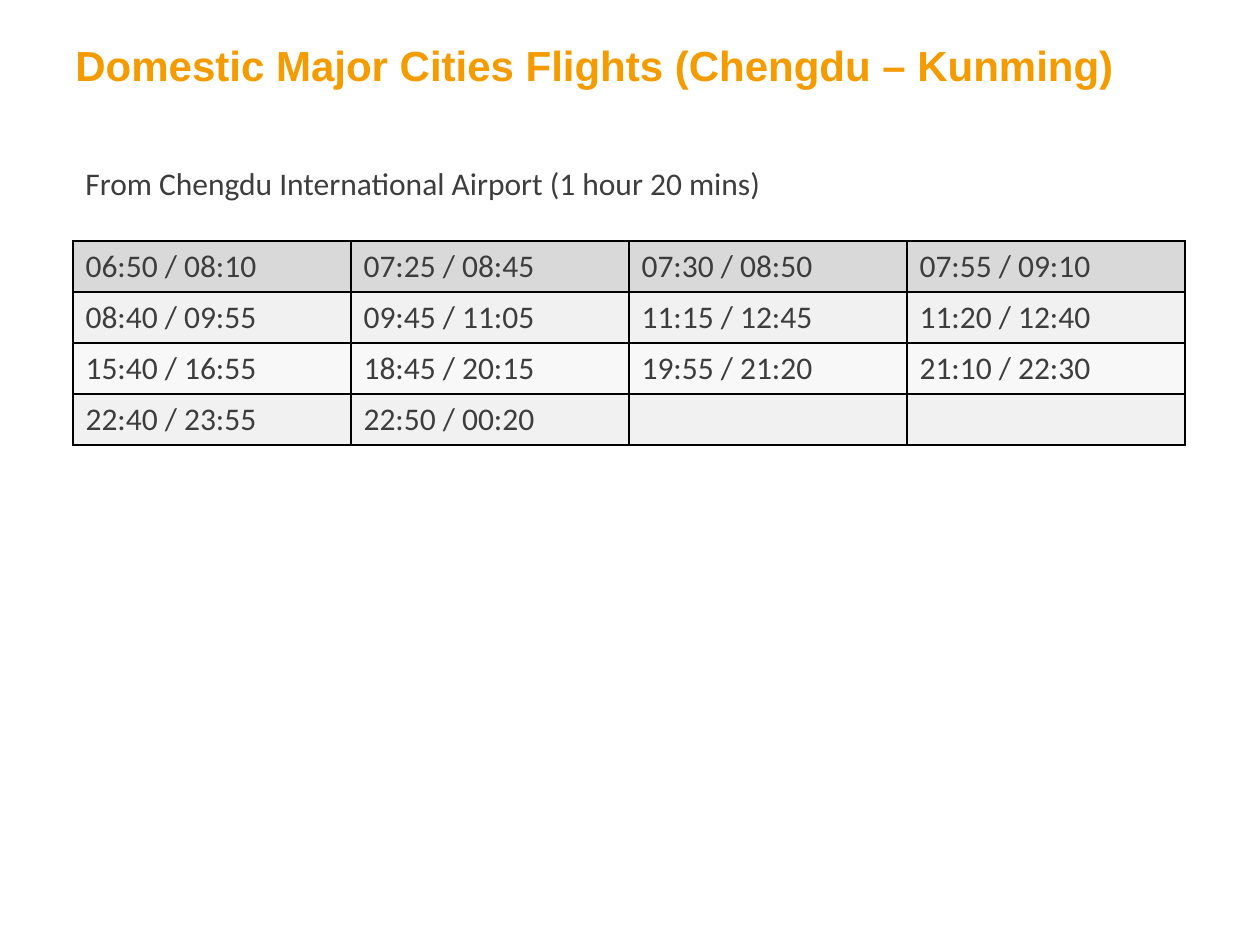
import pptx
import pptx.util
import pptx.dml.color
import pptx.enum.text
import pptx.oxml
import pptx.oxml.ns

RGBColor = pptx.dml.color.RGBColor
ORANGE = RGBColor(0xF4, 0x9B, 0x00)
CHARCOAL = RGBColor(0x3D, 0x3D, 0x3D)
HEADER_GREY = RGBColor(0xD9, 0xD9, 0xD9)
BAND_GREY = RGBColor(0xF1, 0xF1, 0xF1)
PALE_GREY = RGBColor(0xF8, 0xF8, 0xF8)
BLACK = RGBColor(0x00, 0x00, 0x00)

TITLE = "Domestic Major Cities Flights (Chengdu – Kunming)"
SUBTITLE = "From Chengdu International Airport (1 hour 20 mins)"
FLIGHTS = [
    ["06:50 / 08:10", "07:25 / 08:45", "07:30 / 08:50", "07:55 / 09:10"],
    ["08:40 / 09:55", "09:45 / 11:05", "11:15 / 12:45", "11:20 / 12:40"],
    ["15:40 / 16:55", "18:45 / 20:15", "19:55 / 21:20", "21:10 / 22:30"],
    ["22:40 / 23:55", "22:50 / 00:20", "", ""],
]
ROW_FILLS = [HEADER_GREY, BAND_GREY, PALE_GREY, BAND_GREY]

PX_PER_INCH = 126
LEFT, TABLE_TOP = 73, 241
COLUMN_WIDTH, ROW_HEIGHT = 278, 51


def px(length):
    return pptx.util.Inches(length / PX_PER_INCH)


def write(frame, text, font, size, color, bold=False):
    span = frame.paragraphs[0].add_run()
    span.text = text
    span.font.name = font
    span.font.size = pptx.util.Pt(size)
    span.font.bold = bold
    span.font.color.rgb = color


def add_text(page, area, anchor, *style):
    box = page.shapes.add_textbox(*map(px, area))
    box.text_frame.word_wrap = True
    box.text_frame.vertical_anchor = anchor
    write(box.text_frame, *style)


def add_borders(cell):
    properties = cell._tc.get_or_add_tcPr()
    for index, side in enumerate(("lnL", "lnR", "lnT", "lnB")):
        line = pptx.oxml.parse_xml(
            f'<a:{side} {pptx.oxml.ns.nsdecls("a")} w="{pptx.util.Pt(1)}">'
            f'<a:solidFill><a:srgbClr val="{BLACK}"/></a:solidFill></a:{side}>'
        )
        properties.insert(index, line)


def add_flights(page):
    row_count, column_count = len(FLIGHTS), len(FLIGHTS[0])
    area = (LEFT, TABLE_TOP, COLUMN_WIDTH * column_count, ROW_HEIGHT * row_count)
    table = page.shapes.add_table(row_count, column_count, *map(px, area)).table
    for row, times, fill in zip(table.rows, FLIGHTS, ROW_FILLS):
        for cell, time in zip(row.cells, times):
            cell.fill.solid()
            cell.fill.fore_color.rgb = fill
            add_borders(cell)
            if time:
                write(cell.text_frame, time, "Calibri", 18, CHARCOAL)


def main():
    deck = pptx.Presentation()
    deck.slide_width, deck.slide_height = px(1260), px(945)
    page = deck.slides.add_slide(deck.slide_layouts[6])
    anchors = pptx.enum.text.MSO_ANCHOR
    add_text(page, (63, 6, 1134, 117), anchors.MIDDLE, TITLE, "Arial", 24, ORANGE, True)
    add_flights(page)
    add_text(page, (LEFT, 158, 766, 50), anchors.TOP, SUBTITLE, "Calibri", 18, CHARCOAL)
    deck.save("out.pptx")


if __name__ == "__main__":
    main()
